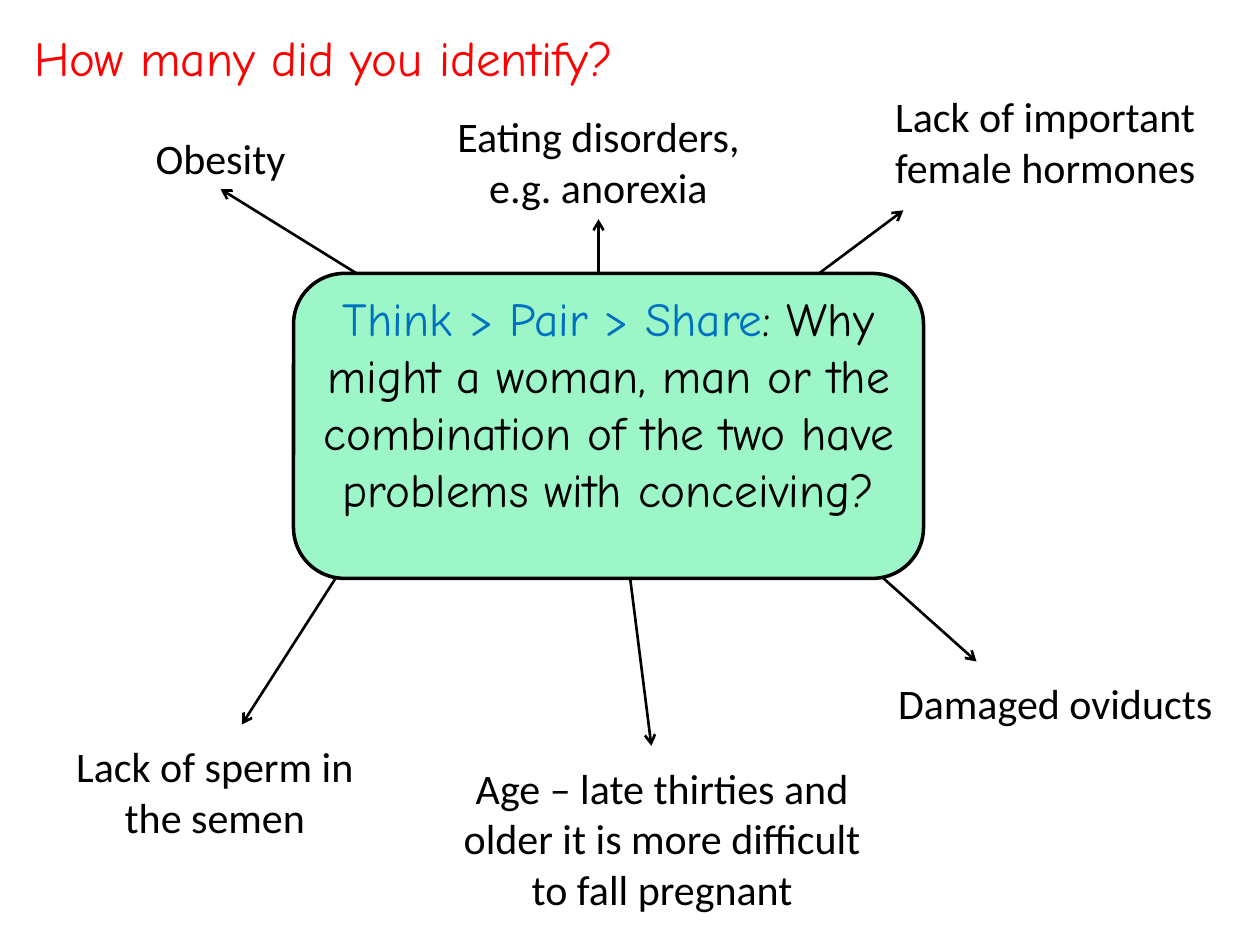
from lxml.etree import SubElement
from pptx import Presentation
from pptx.dml.color import RGBColor
from pptx.enum.shapes import MSO_CONNECTOR, MSO_SHAPE
from pptx.enum.text import MSO_ANCHOR, MSO_AUTO_SIZE, PP_ALIGN
from pptx.oxml.ns import qn
from pptx.util import Inches, Pt

BLACK, RED, BLUE, MINT = "000000", "FF0000", "0070C0", "9CF6C7"
HAND, PLAIN = "Comic Neue", "Calibri"
BOTTOM = 2  # connection site

# text, box (left, top, width, height), arrow start, arrow end
# An end of None joins the arrow to the bottom of the text.
CAUSES = [
    ("Obesity", (1, 1, 1.5, 0.5), (2.83, 2.17), None),
    ("Eating disorders, e.g. anorexia", (3.25, 0.83, 3, 0.91), (4.75, 2.17), None),
    ("Lack of important female hormones", (6.92, 0.67, 2.75, 0.91),
     (6.5, 2.17), (7.17, 1.67)),
    ("Lack of sperm in the semen", (0.33, 5.83, 2.75, 0.91),
     (2.67, 4.58), (1.92, 5.75)),
    ("Age – late thirties and older it is more difficult to fall pregnant",
     (3.42, 6, 3.67, 1.31), (5, 4.58), (5.17, 5.92)),
    ("Damaged oviducts", (7, 5.33, 2.75, 0.5), (7, 4.58), (7.75, 5.25)),
]


def color(code):
    return RGBColor.from_string(code)


def inches(nums):
    return [Inches(n) for n in nums]


class Board:
    """Holds the current slide and the style of its parts."""

    def __init__(self, slide):
        self.slide = slide
        self.shapes = slide.shapes

    def fill_text(self, shape, runs, size, font, align):
        """Write (text, colour) runs as one paragraph."""
        frame = shape.text_frame
        frame.word_wrap = True
        frame.auto_size = MSO_AUTO_SIZE.NONE
        frame.vertical_anchor = MSO_ANCHOR.TOP
        para = frame.paragraphs[0]
        para.alignment = align
        para.font.size = Pt(size)
        para.font.name = font
        for words, tint in runs:
            run = para.add_run()
            run.text = words
            run.font.color.rgb = color(tint)

    def title(self, words, box):
        head = self.shapes.title
        head.left, head.top, head.width, head.height = inches(box)
        self.fill_text(head, [(words, RED)], 28, HAND, PP_ALIGN.LEFT)

    def text(self, runs, box, size=24, font=PLAIN):
        label = self.shapes.add_textbox(*inches(box))
        self.fill_text(label, runs, size, font, PP_ALIGN.CENTER)
        return label

    def panel(self, box):
        shape = self.shapes.add_shape(MSO_SHAPE.ROUNDED_RECTANGLE, *inches(box))
        shape.shadow.inherit = False
        shape.fill.solid()
        shape.fill.fore_color.rgb = color(MINT)
        shape.line.color.rgb = color(BLACK)
        shape.line.width = Pt(2)

    def arrow(self, start, end, label):
        line = self.shapes.add_connector(
            MSO_CONNECTOR.STRAIGHT, *inches(start + (end or start)))
        if end is None:
            line.end_connect(label, BOTTOM)
        line.line.color.rgb = color(BLACK)
        line.line.width = Pt(1.5)
        SubElement(line.line._get_or_add_ln(), qn("a:tailEnd"), type="arrow")
        SubElement(line._element.spPr, qn("a:effectLst"))


def main():
    deck = Presentation()
    deck.slide_width, deck.slide_height = inches((10, 7.5))
    board = Board(deck.slides.add_slide(deck.slide_layouts[5]))
    board.title("How many did you identify?", (0.17, 0.17, 5.58, 0.57))
    board.panel((2.33, 2.17, 5, 2.42))
    board.text([("Think > Pair > Share", BLUE),
                (": Why might a woman, man or the combination of the two "
                 "have problems with conceiving?", BLACK)],
               (2.33, 2.25, 5, 2.37), 27, HAND)
    for words, box, start, end in CAUSES:
        label = board.text([(words, BLACK)], box)
        board.arrow(start, end, label)
    deck.save("out.pptx")


if __name__ == "__main__":
    main()
